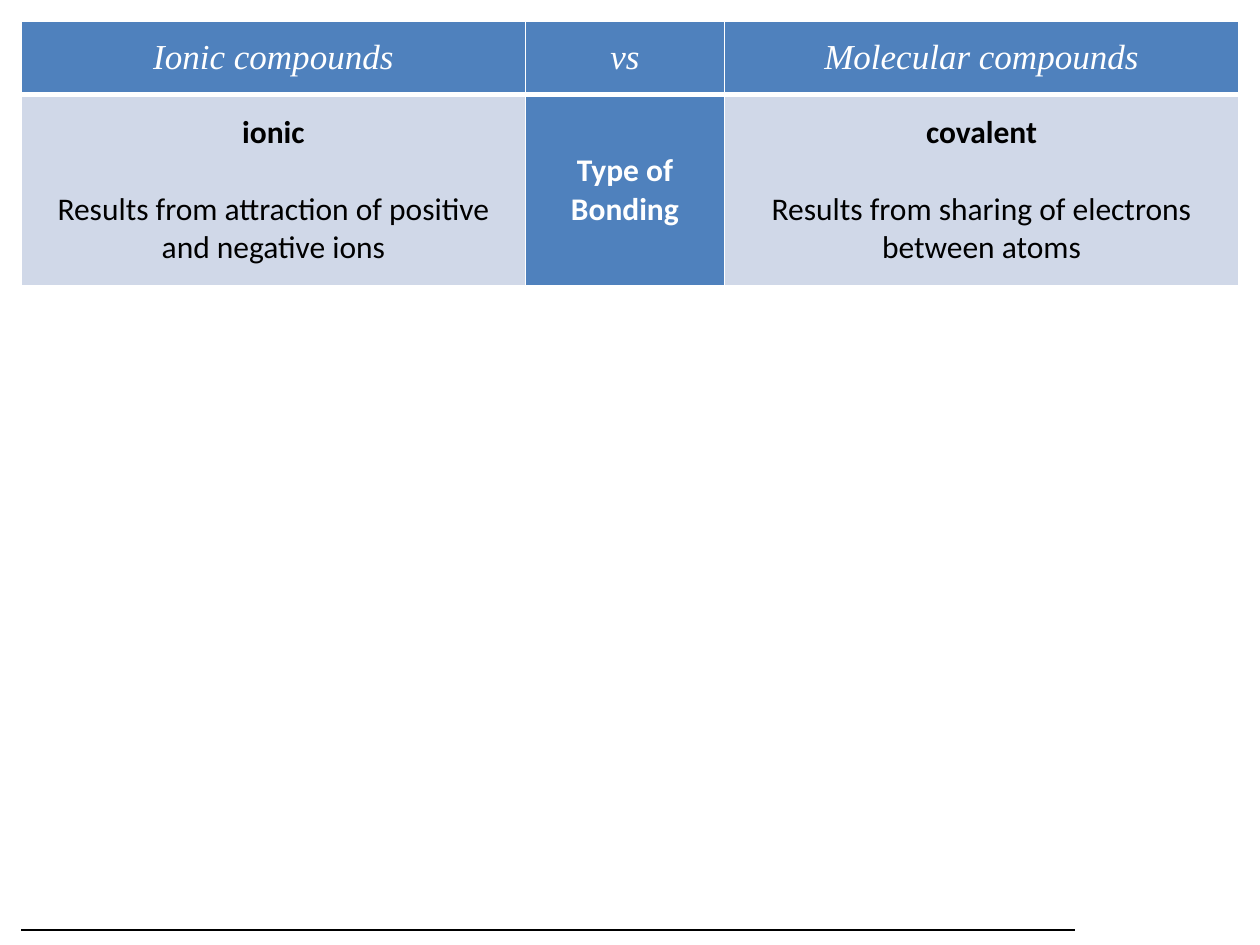
from dataclasses import dataclass

from lxml import etree
from pptx import Presentation
from pptx.dml.color import RGBColor
from pptx.enum.shapes import MSO_CONNECTOR
from pptx.enum.text import MSO_ANCHOR, PP_ALIGN
from pptx.oxml.ns import qn
from pptx.util import Inches, Pt

STRAIGHT = MSO_CONNECTOR.STRAIGHT
MIDDLE = MSO_ANCHOR.MIDDLE
CENTER = PP_ALIGN.CENTER

WHITE = RGBColor(0xFF, 0xFF, 0xFF)
BLACK = RGBColor(0, 0, 0)
BLUE = RGBColor(0x4F, 0x81, 0xBD)
PALE = RGBColor(0xD0, 0xD8, 0xE8)

MARGIN = 0.17
COLUMN_WIDTHS = (4, 1.58, 4.08)
ROW_HEIGHTS = (0.58, 1.5)
HEADER_FONT = {"name": "Times New Roman", "size": Pt(20), "italic": True, "bold": False}
BODY_FONT = {"name": "Calibri", "size": Pt(18), "italic": False}


@dataclass(frozen=True)
class Entry:
    title: str
    detail: str = ""
    fill: RGBColor = BLUE
    color: RGBColor = WHITE


@dataclass(frozen=True)
class RowStyle:
    font: dict
    inset: float
    borders: dict


HEADER_STYLE = RowStyle(HEADER_FONT, 0.05, {"L": 1, "R": 1, "T": 1, "B": 3})
BODY_STYLE = RowStyle({**BODY_FONT, "bold": True}, 0.15, {"L": 1, "R": 1, "T": 3, "B": 1})

ROWS = (
    (HEADER_STYLE, (Entry("Ionic compounds"), Entry("vs"), Entry("Molecular compounds"))),
    (BODY_STYLE, (
        Entry("ionic", "Results from attraction of positive and negative ions", PALE, BLACK),
        Entry("Type of Bonding"),
        Entry("covalent", "Results from sharing of electrons between atoms", PALE, BLACK),
    )),
)


def set_values(target, values: dict) -> None:
    for name, value in values.items():
        setattr(target, name, value)


def write_para(para, text: str, font: dict, color: RGBColor) -> None:
    para.alignment = CENTER
    span = para.add_run()
    span.text = text
    set_values(span.font, font)
    span.font.color.rgb = color


def add_borders(cell, borders: dict) -> None:
    properties = cell._tc.get_or_add_tcPr()
    for side, width in borders.items():
        line = etree.SubElement(properties, qn(f"a:ln{side}"), w=str(Pt(width)))
        fill = etree.SubElement(line, qn("a:solidFill"))
        etree.SubElement(fill, qn("a:srgbClr"), val=str(WHITE))


def fill_cell(cell, entry: Entry, style: RowStyle) -> None:
    add_borders(cell, style.borders)
    cell.fill.solid()
    cell.fill.fore_color.rgb = entry.fill
    set_values(cell, {
        "vertical_anchor": MIDDLE,
        "margin_left": Inches(0.1),
        "margin_right": Inches(0.1),
        "margin_top": Inches(style.inset),
        "margin_bottom": Inches(style.inset),
    })
    write_para(cell.text_frame.paragraphs[0], entry.title, style.font, entry.color)
    if entry.detail:
        para = cell.text_frame.add_paragraph()
        para.space_before = Pt(22)
        write_para(para, entry.detail, {**style.font, "bold": False}, entry.color)


def add_comparison(page) -> None:
    table = page.shapes.add_table(
        len(ROW_HEIGHTS), len(COLUMN_WIDTHS), Inches(MARGIN), Inches(MARGIN),
        Inches(sum(COLUMN_WIDTHS)), Inches(sum(ROW_HEIGHTS)),
    ).table
    set_values(table, {"first_row": False, "horz_banding": False})
    for column, width in zip(table.columns, COLUMN_WIDTHS):
        column.width = Inches(width)
    for row, height, (style, entries) in zip(table.rows, ROW_HEIGHTS, ROWS):
        row.height = Inches(height)
        for cell, entry in zip(row.cells, entries):
            fill_cell(cell, entry, style)


def add_footer_rule(page) -> None:
    height = Inches(7.38)
    rule = page.shapes.add_connector(STRAIGHT, Inches(MARGIN), height, Inches(8.53), height)
    rule.line.color.rgb = BLACK
    rule.line.width = Pt(0.75)
    etree.SubElement(rule._element.spPr, qn("a:effectLst"))


def main() -> None:
    deck = Presentation()
    set_values(deck, {"slide_width": Inches(10), "slide_height": Inches(7.5)})
    page = deck.slides.add_slide(deck.slide_layouts[6])
    add_footer_rule(page)
    add_comparison(page)
    deck.save("out.pptx")


if __name__ == "__main__":
    main()
